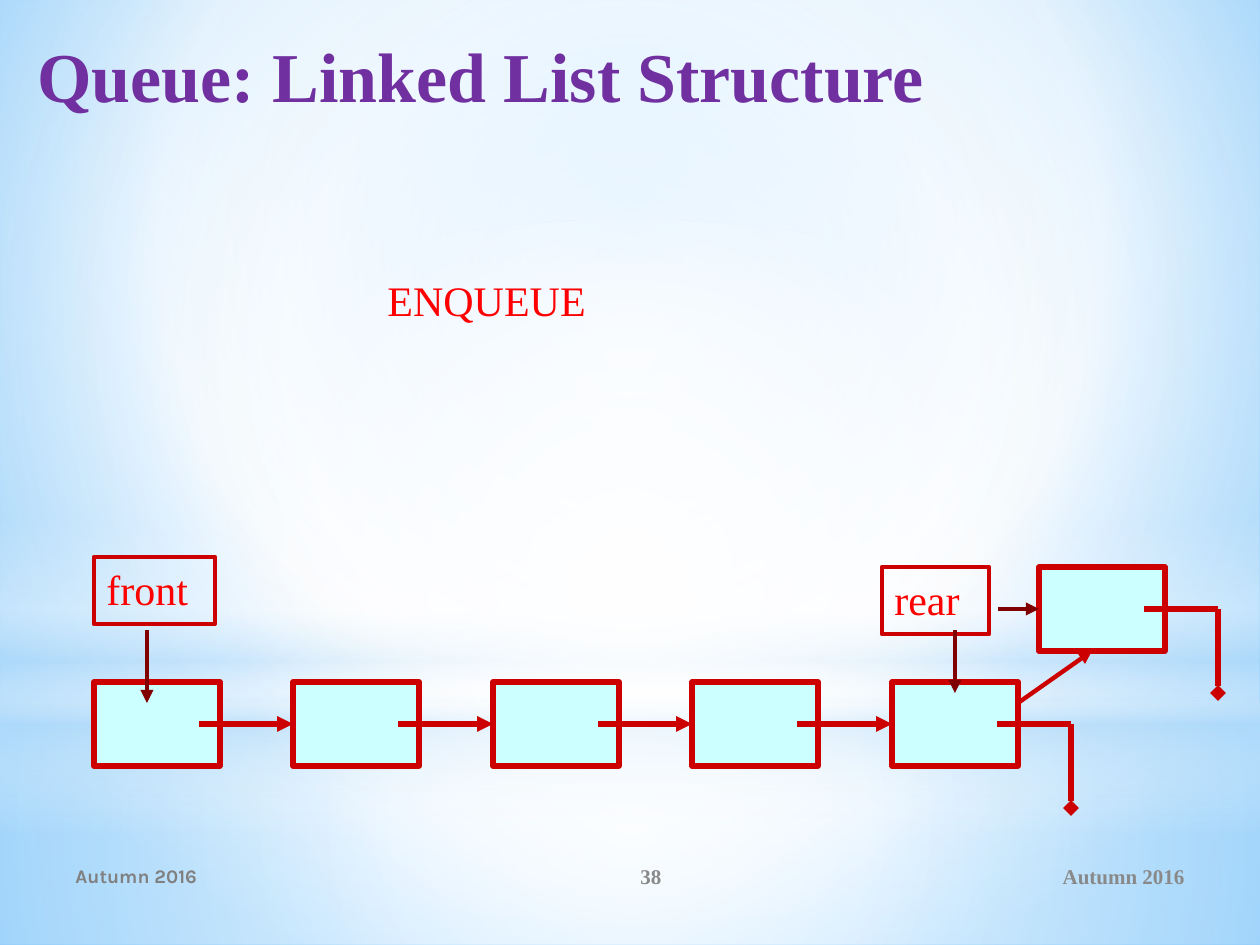
import pptx
import pptx.util
import pptx.dml.color
import pptx.enum.shapes
import pptx.enum.text
import pptx.oxml.ns
from lxml import etree

RGB = pptx.dml.color.RGBColor
WHITE = RGB(0xFF, 0xFF, 0xFF)
SKY = RGB(0x9E, 0xD5, 0xFF)
DEEP_SKY = RGB(0x5B, 0xB9, 0xFF)
PALE_BLUE = RGB(0xB4, 0xDC, 0xFA)
CYAN = RGB(0xCC, 0xFF, 0xFF)
CRIMSON = RGB(0xCC, 0x00, 0x00)
MAROON = RGB(0x80, 0x00, 0x00)
RED = RGB(0xFF, 0x00, 0x00)
PURPLE = RGB(0x70, 0x30, 0xA0)
GREY = RGB(0x89, 0x89, 0x89)
DARK_GREY = RGB(0x80, 0x80, 0x80)

SHAPE = pptx.enum.shapes.MSO_SHAPE
ANCHOR = pptx.enum.text.MSO_ANCHOR
ALIGN = pptx.enum.text.PP_ALIGN
SERIF = "Times New Roman"
PX_PER_INCH = 126
NODE_WIDTH, NODE_HEIGHT = 126, 84
ROW_TOP = 682


def px(length):
    return pptx.util.Emu(round(length * 914400 / PX_PER_INCH))


def add_child(parent, tag, **attributes):
    child = etree.SubElement(parent, pptx.oxml.ns.qn(tag))
    for name, value in attributes.items():
        child.set(name, str(value))
    return child


def set_gradient(fill, properties, stops, center=None):
    fill.gradient()
    gradient = properties.find(pptx.oxml.ns.qn("a:gradFill"))
    for child in list(gradient):
        gradient.remove(child)
    stop_list = add_child(gradient, "a:gsLst")
    for position, color, opacity in stops:
        stop = add_child(stop_list, "a:gs", pos=position * 1000)
        tone = add_child(stop, "a:srgbClr", val=color)
        if opacity < 100:
            add_child(tone, "a:alpha", val=opacity * 1000)
    if center is None:
        add_child(gradient, "a:lin", ang=5400000, scaled=0)
    else:
        round_path = add_child(gradient, "a:path", path="circle")
        sides = {side: share * 1000 for side, share in zip("ltrb", center)}
        add_child(round_path, "a:fillToRect", **sides)


def add_box(page, kind, left, top, width, height):
    box = page.shapes.add_shape(kind, px(left), px(top), px(width), px(height))
    box.shadow.inherit = False
    return box


def add_glow(page, kind, top, height, stops, center=None):
    glow = add_box(page, kind, 0, top, 1260, height)
    glow.line.fill.background()
    set_gradient(glow.fill, glow._element.spPr, stops, center)


def add_backdrop(page):
    background = page.background
    background.fill.solid()
    set_gradient(background.fill, page._element.cSld.bg.bgPr,
                 [(0, SKY, 100), (60, WHITE, 100), (100, DEEP_SKY, 100)],
                 (20, 10, 20, 60))
    middle = (50, 50, 50, 50)
    add_glow(page, SHAPE.RECTANGLE, 703, 242,
             [(0, WHITE, 91), (37, WHITE, 76), (100, PALE_BLUE, 79)], middle)
    add_glow(page, SHAPE.RECTANGLE, 0, 703,
             [(0, WHITE, 89), (48, WHITE, 62), (100, PALE_BLUE, 79)], middle)
    add_glow(page, SHAPE.RECTANGLE, 519, 315,
             [(0, WHITE, 0), (29, WHITE, 30), (45, PALE_BLUE, 40),
              (55, WHITE, 26), (65, PALE_BLUE, 60), (100, WHITE, 0)])
    add_glow(page, SHAPE.OVAL, 220, 703, [(0, WHITE, 100), (56, WHITE, 0)], middle)


def write_text(frame, text, color, size, name=SERIF, bold=False, align=ALIGN.LEFT):
    para = frame.paragraphs[0]
    para.alignment = align
    span = para.add_run()
    span.text = text
    values = {"size": pptx.util.Pt(size), "name": name, "bold": bold}
    for attribute, value in values.items():
        setattr(span.font, attribute, value)
    span.font.color.rgb = color


def add_footer(page, left, width, text, **format_values):
    box = page.shapes.add_textbox(px(left), px(851), px(width), px(50))
    box.text_frame.word_wrap = True
    box.text_frame.vertical_anchor = ANCHOR.MIDDLE
    write_text(box.text_frame, text, bold=True, **format_values)


def add_label(page, left, top, width, height, text, framed=True):
    box = page.shapes.add_textbox(px(left), px(top), px(width), px(height))
    box.text_frame.word_wrap = False
    box.text_frame.auto_size = pptx.enum.text.MSO_AUTO_SIZE.SHAPE_TO_FIT_TEXT
    write_text(box.text_frame, text, RED, 24)
    if framed:
        box.line.color.rgb = CRIMSON
        box.line.width = pptx.util.Pt(2.5)


def add_line(page, start, end, color=CRIMSON, width=3, tip=None):
    line = page.shapes.add_connector(
        pptx.enum.shapes.MSO_CONNECTOR.STRAIGHT, *map(px, start + end))
    line.line.color.rgb = color
    line.line.width = pptx.util.Pt(width)
    if tip:
        add_child(line.line._get_or_add_ln(), "a:tailEnd", type=tip)
    add_child(line._element.spPr, "a:effectLst")


def add_node(page, left, top):
    node = add_box(page, SHAPE.RECTANGLE, left, top, NODE_WIDTH, NODE_HEIGHT)
    node.fill.solid()
    node.fill.fore_color.rgb = CYAN
    node.line.color.rgb = CRIMSON
    node.line.width = pptx.util.Pt(3)


def add_null_pointer(page, left, top):
    middle = top + NODE_HEIGHT // 2
    corner = (left + 179, middle)
    add_line(page, (left + 105, middle), corner)
    add_line(page, corner, (left + 179, middle + 84), tip="diamond")


def add_queue(page):
    lefts = [94 + 399 * index // 2 for index in range(5)]
    middle = ROW_TOP + NODE_HEIGHT // 2
    for left in lefts:
        add_node(page, left, ROW_TOP)
    for left, following in zip(lefts, lefts[1:]):
        add_line(page, (left + 105, middle), (following, middle), tip="triangle")
    add_null_pointer(page, lefts[-1], ROW_TOP)


def add_title(page):
    title = page.shapes.title
    bounds = {"left": 25, "top": 26, "width": 1201, "height": 158}
    for side, length in bounds.items():
        setattr(title, side, px(length))
    title.text_frame.vertical_anchor = ANCHOR.TOP
    write_text(title.text_frame, "Queue: Linked List Structure", PURPLE, 40, bold=True)
    page.shapes._spTree.append(title._element)


def main():
    deck = pptx.Presentation()
    deck.slide_width, deck.slide_height = px(1260), px(945)
    page = deck.slides.add_slide(deck.slide_layouts.get_by_name("Title Only"))
    add_backdrop(page)
    add_footer(page, 851, 346, "Autumn 2016", color=GREY, size=12, align=ALIGN.RIGHT)
    add_footer(page, 63, 462, "Autumn 2016", color=DARK_GREY, size=11, name="Karla")
    add_footer(page, 525, 252, "38", color=GREY, size=12, align=ALIGN.CENTER)
    add_queue(page)
    add_label(page, 94, 557, 121, 67, "front")
    add_label(page, 882, 567, 107, 67, "rear")
    add_line(page, (147, 630), (147, 703), MAROON, 2.5, "triangle")
    add_line(page, (955, 630), (955, 693), MAROON, 2.5, "triangle")
    add_node(page, 1039, 567)
    add_null_pointer(page, 1039, 567)
    add_line(page, (1018, 703), (1092, 651), CRIMSON, 2.5, "triangle")
    add_line(page, (998, 609), (1039, 609), MAROON, 2.5, "triangle")
    add_label(page, 375, 268, 233, 63, "ENQUEUE", framed=False)
    add_title(page)
    deck.save("out.pptx")


if __name__ == "__main__":
    main()
